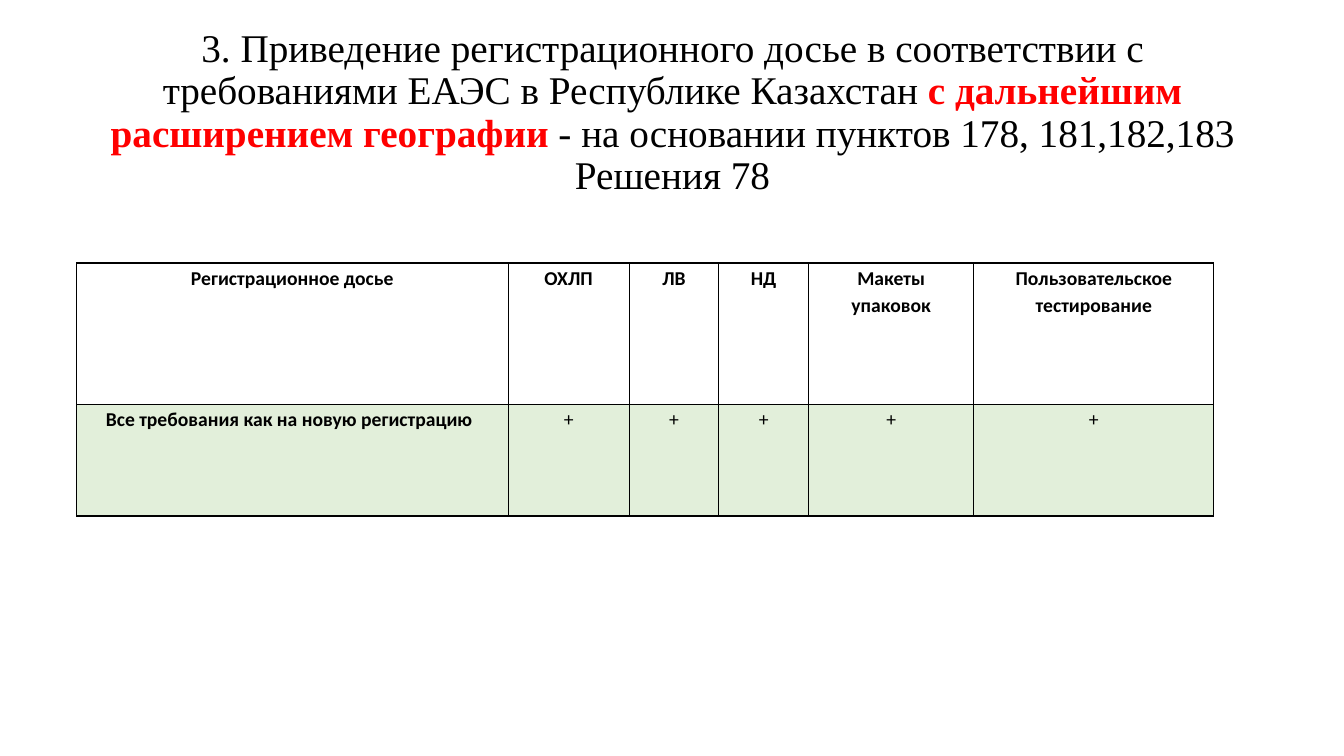
import pptx
import pptx.util
import pptx.dml.color
import pptx.enum.text
import pptx.oxml
import pptx.oxml.ns

Inches = pptx.util.Inches
Pt = pptx.util.Pt
RGBColor = pptx.dml.color.RGBColor
CENTER = pptx.enum.text.PP_ALIGN.CENTER
LEFT = pptx.enum.text.PP_ALIGN.LEFT

BLACK = RGBColor(0x00, 0x00, 0x00)
RED = RGBColor(0xFF, 0x00, 0x00)
PALE_GREEN = RGBColor(0xE2, 0xEF, 0xDA)

TITLE_RUNS = [
    ("3. Приведение регистрационного досье в соответствии с требованиями "
     "ЕАЭС в Республике Казахстан ", BLACK, False),
    ("с дальнейшим расширением географии", RED, True),
    (" - на основании пунктов 178, 181,182,183 Решения 78", BLACK, False),
]
ROWS = [
    ["Регистрационное досье", "ОХЛП", "ЛВ", "НД", "Макеты упаковок",
     "Пользовательское\nтестирование"],
    ["Все требования как на новую регистрацию"] + ["+"] * 5,
]
COL_WIDTHS = [4.28, 1.2, 0.89, 0.89, 1.64, 2.38]
ROW_HEIGHTS = [1.4, 1.11]


def set_font(r, name, size, color, bold):
    r.font.name = name
    r.font.size = Pt(size)
    r.font.color.rgb = color
    r.font.bold = bold


def add_title(slide, left, top, width, height):
    sp = slide.shapes.title
    sp.left, sp.top = Inches(left), Inches(top)
    sp.width, sp.height = Inches(width), Inches(height)
    tf = sp.text_frame
    tf.word_wrap = True
    tf.auto_size = pptx.enum.text.MSO_AUTO_SIZE.NONE
    tf.vertical_anchor = pptx.enum.text.MSO_ANCHOR.MIDDLE
    p = tf.paragraphs[0]
    p.alignment = CENTER
    p.line_spacing = 0.9
    for text, color, bold in TITLE_RUNS:
        r = p.add_run()
        r.text = text
        set_font(r, "Times New Roman", 28, color, bold)


def add_borders(cell):
    tcPr = cell._tc.get_or_add_tcPr()
    for side in "LRTB":
        tcPr.append(pptx.oxml.parse_xml(
            f'<a:ln{side} {pptx.oxml.ns.nsdecls("a")} w="{Pt(1)}"><a:solidFill>'
            f'<a:srgbClr val="{BLACK}"/></a:solidFill></a:ln{side}>'))


def fill_cell(cell, text, row, col):
    is_label = row == 1 and col == 0
    add_borders(cell)
    if row == 0:
        cell.fill.background()
    else:
        cell.fill.solid()
        cell.fill.fore_color.rgb = PALE_GREEN
    # The row label is indented from the left edge
    cell.margin_left = Inches(0.29 if is_label else 0.07)
    cell.margin_right = Inches(0.07)
    cell.margin_top = cell.margin_bottom = 0
    cell.text_frame.text = text
    for p in cell.text_frame.paragraphs:
        p.alignment = LEFT if is_label else CENTER
        p.line_spacing = 1.15
        for r in p.runs:
            set_font(r, "Calibri", 14, BLACK, row == 0 or is_label)


def add_requirements_table(slide, left, top):
    table = slide.shapes.add_table(
        len(ROWS), len(COL_WIDTHS), Inches(left), Inches(top),
        Inches(sum(COL_WIDTHS)), Inches(sum(ROW_HEIGHTS))).table
    table.first_row = table.horz_banding = False
    for column, width in zip(table.columns, COL_WIDTHS):
        column.width = Inches(width)
    for i, (texts, height) in enumerate(zip(ROWS, ROW_HEIGHTS)):
        table.rows[i].height = Inches(height)
        for j, text in enumerate(texts):
            fill_cell(table.cell(i, j), text, i, j)


def main():
    prs = pptx.Presentation()
    prs.slide_width, prs.slide_height = Inches(13.33), Inches(7.5)
    slide = prs.slides.add_slide(prs.slide_layouts[5])
    # Heading
    add_title(slide, 0.92, 0.4, 11.5, 1.45)
    # Dossier requirements
    add_requirements_table(slide, 0.76, 2.61)
    prs.save("out.pptx")


if __name__ == "__main__":
    main()
